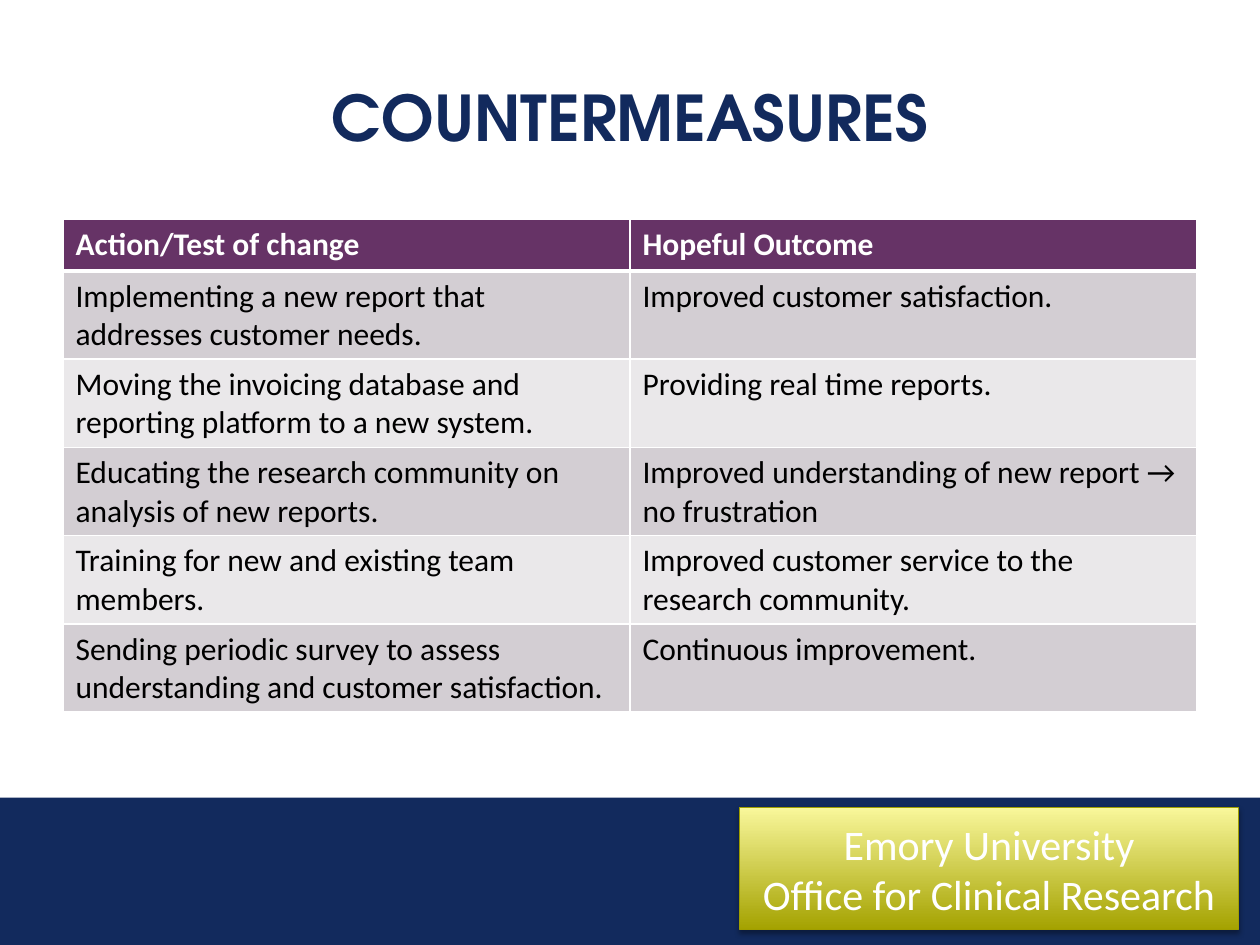
from dataclasses import dataclass

from lxml import etree
from pptx import Presentation
from pptx import util as u
from pptx.dml.color import RGBColor
from pptx.enum import shapes, text
from pptx.oxml import ns


@dataclass(frozen=True)
class Theme:
    navy: str = "122A5D"
    purple: str = "663366"
    bands: tuple = ("D3CED3", "EAE8EA")
    white: str = "FFFFFF"
    black: str = "000000"
    gold_dark: str = "A4A200"
    gold_light: str = "F9F79B"
    gold_line: str = "A09E00"
    heading_font: str = "TeX Gyre Adventor"
    body_font: str = "Calibri"
    title_size: int = 36
    table_size: int = 18
    badge_size: int = 24


THEME = Theme()
ROWS = [
    ("Action/Test of change", "Hopeful Outcome"),
    ("Implementing a new report that addresses customer needs.",
     "Improved customer satisfaction."),
    ("Moving the invoicing database and reporting platform to a new system.",
     "Providing real time reports."),
    ("Educating the research community on analysis of new reports.",
     "Improved understanding of new report → no frustration"),
    ("Training for new and existing team members.",
     "Improved customer service to the research community."),
    ("Sending periodic survey to assess understanding and customer satisfaction.",
     "Continuous improvement."),
]


def box(left, top, width, height):
    return [u.Inches(value) for value in (left, top, width, height)]


def rgb(color):
    return RGBColor.from_string(color)


def write(frame, content, name, size, color, bold=False, align=None):
    frame.text = content
    frame.word_wrap = True
    for paragraph in frame.paragraphs:
        paragraph.alignment = align
        font = paragraph.font
        font.name, font.size, font.bold = name, u.Pt(size), bold
        font.color.rgb = rgb(color)


def add_color(parent, color):
    return etree.SubElement(parent, ns.qn("a:srgbClr"), val=color)


def set_border(cell, side, width):
    line = etree.SubElement(cell._tc.get_or_add_tcPr(), ns.qn(f"a:ln{side}"),
                            w=str(u.Pt(width)))
    add_color(etree.SubElement(line, ns.qn("a:solidFill")), THEME.white)


def add_rectangle(slide, place):
    shape = slide.shapes.add_shape(shapes.MSO_SHAPE.RECTANGLE, *place)
    shape.shadow.inherit = False
    return shape


def add_footer_band(slide):
    band = add_rectangle(slide, box(0, 6.33, 10, 1.17))
    band.fill.solid()
    band.fill.fore_color.rgb = rgb(THEME.navy)
    band.line.fill.background()


def add_title(slide, title):
    frame = slide.shapes.add_textbox(*box(0.5, 0.3, 9, 1.25)).text_frame
    frame.vertical_anchor = text.MSO_ANCHOR.MIDDLE
    write(frame, title, THEME.heading_font, THEME.title_size, THEME.navy,
          True, text.PP_ALIGN.CENTER)


def add_table(slide, rows):
    table = slide.shapes.add_table(len(rows), len(rows[0]),
                                   *box(0.5, 1.74, 9, 3.91)).table
    for row_index, values in enumerate(rows):
        header = row_index == 0
        table.rows[row_index].height = u.Inches(0.41 if header else 0.7)
        fill = THEME.purple if header else THEME.bands[(row_index - 1) % 2]
        widths = {"L": 1, "R": 1, "T": 3 if row_index == 1 else 1,
                  "B": 3 if header else 1}
        for column_index, value in enumerate(values):
            cell = table.cell(row_index, column_index)
            for side, width in widths.items():
                set_border(cell, side, width)
            cell.fill.solid()
            cell.fill.fore_color.rgb = rgb(fill)
            write(cell.text_frame, value, THEME.body_font, THEME.table_size,
                  THEME.white if header else THEME.black, header)


def add_shadow(shape):
    effects = shape._element.spPr.find(ns.qn("a:effectLst"))
    shadow = etree.SubElement(effects, ns.qn("a:outerShdw"),
                              blurRad=str(u.Pt(3.1)), dist=str(u.Pt(1.8)),
                              dir="5400000", rotWithShape="0")
    etree.SubElement(add_color(shadow, THEME.black), ns.qn("a:alpha"), val="35000")


def add_badge(slide, content):
    badge = add_rectangle(slide, box(5.87, 6.41, 3.96, 0.97))
    badge.fill.gradient()
    badge.fill.gradient_angle = 90
    for stop, color in zip(badge.fill.gradient_stops,
                           (THEME.gold_dark, THEME.gold_light)):
        stop.color.rgb = rgb(color)
    badge.line.color.rgb = rgb(THEME.gold_line)
    badge.line.width = u.Pt(0.75)
    add_shadow(badge)
    badge.text_frame.vertical_anchor = text.MSO_ANCHOR.MIDDLE
    write(badge.text_frame, content, THEME.body_font, THEME.badge_size,
          THEME.white, align=text.PP_ALIGN.CENTER)


def main():
    presentation = Presentation()
    presentation.slide_width = u.Inches(10)
    presentation.slide_height = u.Inches(7.5)
    slide = presentation.slides.add_slide(presentation.slide_layouts[6])
    add_footer_band(slide)
    add_title(slide, "COUNTERMEASURES")
    add_table(slide, ROWS)
    add_badge(slide, "Emory University\nOffice for Clinical Research")
    presentation.save("out.pptx")


if __name__ == "__main__":
    main()
